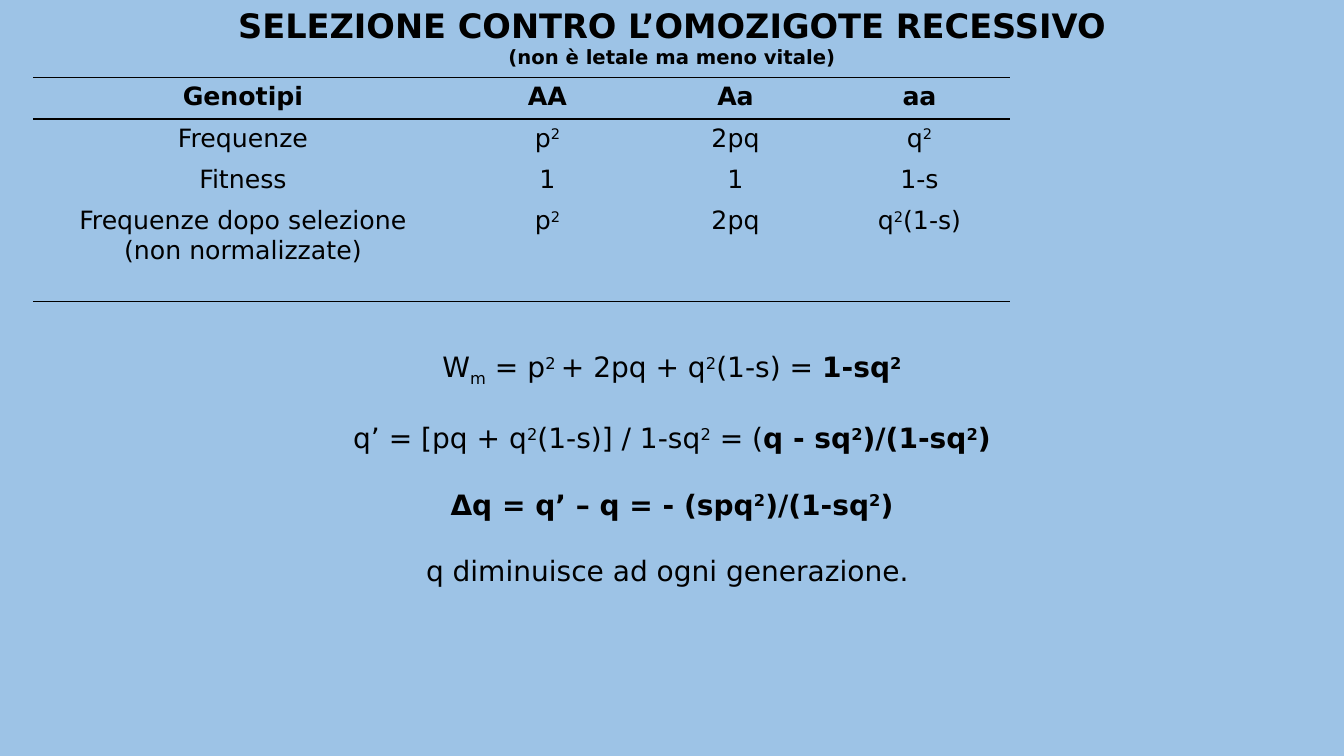
from lxml import etree
from pptx import Presentation
from pptx.dml.color import RGBColor
from pptx.enum.text import MSO_ANCHOR, MSO_AUTO_SIZE, PP_ALIGN
from pptx.oxml.ns import qn
from pptx.util import Inches, Pt

FONT = "DejaVu Sans"
COLORS = {"background": "9DC3E6", "ink": "000000"}
NO_STYLE_NO_GRID = "{2D5ABB26-0587-4C30-8999-92F81FD0307C}"
BASELINES = {"^": "30000", "_": "-25000"}

TITLE = "SELEZIONE CONTRO L’OMOZIGOTE RECESSIVO"
SUBTITLE = "(non è letale ma meno vitale)"
GENOTYPES = [
    ["Genotipi", "AA", "Aa", "aa"],
    ["Frequenze", "p^2^", "2pq", "q^2^"],
    ["Fitness", "1", "1", "1-s"],
    ["Frequenze dopo selezione\n(non normalizzate)", "p^2^", "2pq", "q^2^(1-s)"],
]
COLUMN_WIDTHS = [4.16, 1.88, 1.85, 1.8]
ROW_HEIGHTS = [0.41, 0.41, 0.41, 0.99]
FORMULAS = [
    "W_m_ = p^2 ^+ 2pq + q^2^(1-s) = *1-sq^2^*",
    "q’ = [pq + q^2^(1-s)] / 1-sq^2^ = (*q - sq^2^)/(1-sq^2^)*",
    "*Δq = q’ – q = - (spq^2^)/(1-sq^2^)*",
    "q diminuisce ad ogni generazione. ",
]


def add_run(paragraph, text, bold, baseline):
    run = paragraph.add_run()
    run.text = text
    if bold:
        run.font.bold = True
    if baseline:
        run.font._element.set("baseline", BASELINES[baseline])


def write_marked(paragraph, marked):
    """Asterisks delimit bold, carets superscript, underscores subscript."""
    text, bold, baseline = "", False, None
    for character in marked:
        if character != "*" and character not in BASELINES:
            text += character
            continue
        if text:
            add_run(paragraph, text, bold, baseline)
            text = ""
        if character == "*":
            bold = not bold
        else:
            baseline = None if baseline else character
    if text:
        add_run(paragraph, text, bold, baseline)


def write_paragraphs(frame, lines, size, bold=None, gap=0):
    for index, line in enumerate(lines):
        paragraph = frame.paragraphs[0] if index == 0 else frame.add_paragraph()
        write_marked(paragraph, line)
        paragraph.alignment = PP_ALIGN.CENTER
        if index and gap:
            paragraph.space_before = Pt(gap)
        font = paragraph.font
        font.name = FONT
        font.size = Pt(size)
        font.bold = bold
        font.color.rgb = RGBColor.from_string(COLORS["ink"])


def add_title(slide):
    title = slide.shapes.title
    title.left, title.top = Inches(0), Inches(0)
    title.width, title.height = Inches(13.33), Inches(0.74)
    frame = title.text_frame
    frame.auto_size = MSO_AUTO_SIZE.NONE
    frame.vertical_anchor = MSO_ANCHOR.TOP
    write_paragraphs(frame, [TITLE, SUBTITLE], 24, bold=True)
    frame.paragraphs[1].font.size = Pt(14)


def add_borders(cell, tags):
    properties = cell._tc.get_or_add_tcPr()
    for position, tag in enumerate(tags):
        line = etree.Element(qn(tag), w=str(Pt(1)))
        fill = etree.SubElement(line, qn("a:solidFill"))
        etree.SubElement(fill, qn("a:srgbClr"), val=COLORS["ink"])
        properties.insert(position, line)


def add_genotype_table(slide):
    frame = slide.shapes.add_table(
        len(ROW_HEIGHTS), len(COLUMN_WIDTHS), Inches(0.33), Inches(0.77),
        Inches(sum(COLUMN_WIDTHS)), Inches(sum(ROW_HEIGHTS)))
    table = frame.table
    table.horz_banding = False
    table._tbl.tblPr.find(qn("a:tableStyleId")).text = NO_STYLE_NO_GRID
    for column, width in zip(table.columns, COLUMN_WIDTHS):
        column.width = Inches(width)
    for row, height in zip(table.rows, ROW_HEIGHTS):
        row.height = Inches(height)
    borders = {0: ["a:lnT", "a:lnB"], len(GENOTYPES) - 1: ["a:lnB"]}
    for row_index, values in enumerate(GENOTYPES):
        for column_index, value in enumerate(values):
            cell = table.cell(row_index, column_index)
            cell.fill.background()
            write_paragraphs(cell.text_frame, value.split("\n"), 18, bold=row_index == 0)
            add_borders(cell, borders.get(row_index, []))


def add_formulas(slide):
    box = slide.shapes.add_textbox(Inches(0), Inches(3.42), Inches(13.33), Inches(2.46))
    box.text_frame.word_wrap = True
    write_paragraphs(box.text_frame, FORMULAS, 20, gap=23.5)


def main():
    presentation = Presentation()
    presentation.slide_width = Inches(13.33)
    presentation.slide_height = Inches(7.5)
    slide = presentation.slides.add_slide(presentation.slide_layouts[5])
    background = slide.background.fill
    background.solid()
    background.fore_color.rgb = RGBColor.from_string(COLORS["background"])
    add_title(slide)
    add_genotype_table(slide)
    add_formulas(slide)
    presentation.save("out.pptx")


if __name__ == "__main__":
    main()
